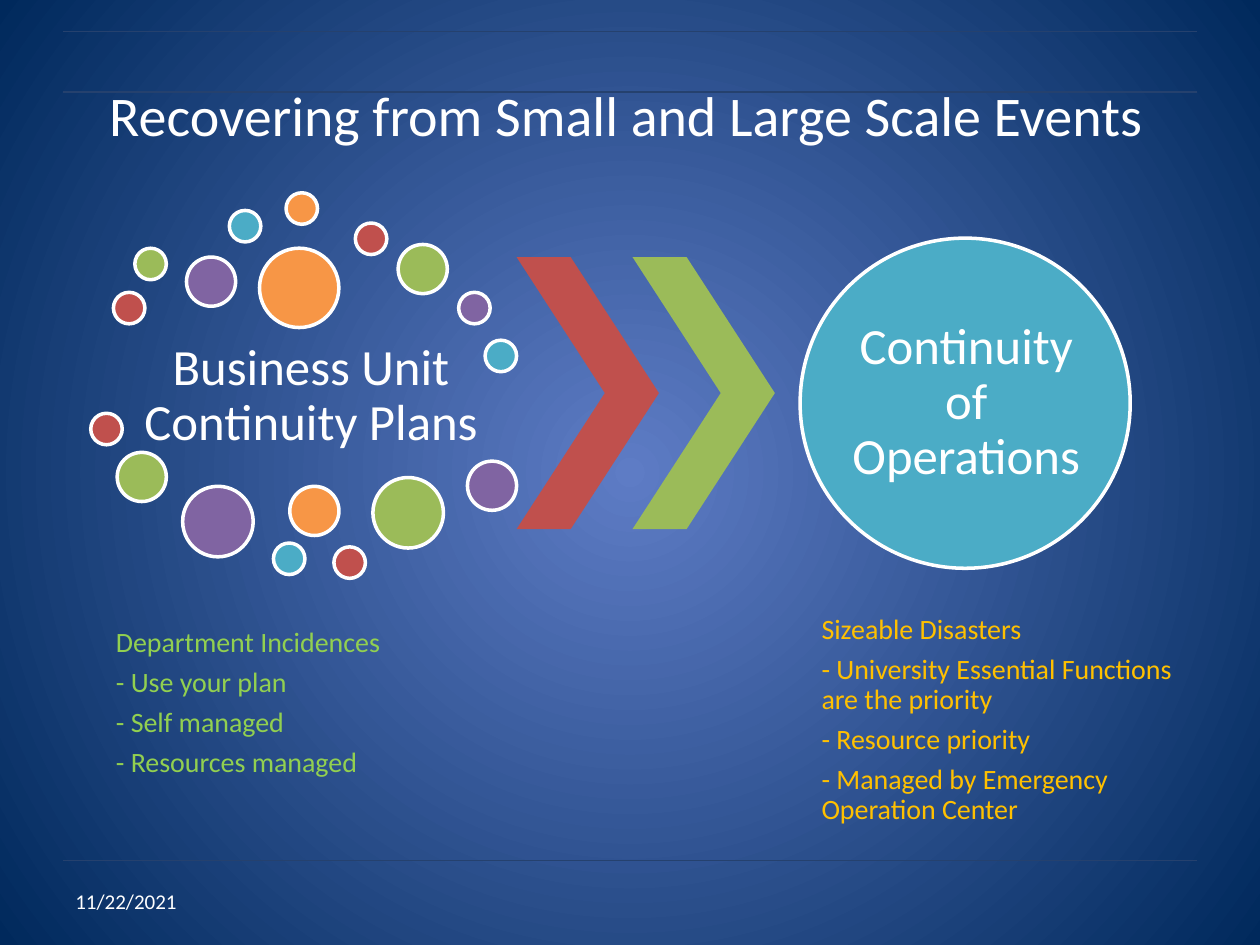
from itertools import cycle
from typing import NamedTuple

from pptx import Presentation
from pptx.dml.color import RGBColor
from pptx.enum.shapes import MSO_CONNECTOR, MSO_SHAPE
from pptx.enum.text import MSO_ANCHOR, PP_ALIGN
from pptx.oxml import parse_xml
from pptx.oxml.ns import nsdecls, qn
from pptx.shapes.autoshape import Shape
from pptx.slide import Slide
from pptx.util import Inches, Pt

WHITE, RULE = "FFFFFF", "25416E"
RED, GREEN, PURPLE, TEAL, ORANGE = "C0504D", "9BBB59", "8064A2", "4BACC6", "F79646"
ACCENTS = (RED, GREEN, PURPLE, TEAL, ORANGE)
SMALL, MEDIUM, LARGE, LARGEST = 0.25, 0.39, 0.56, 0.63


class Box(NamedTuple):
    left: float
    top: float
    width: float
    height: float


class Dot(NamedTuple):
    left: float
    top: float
    diameter: float


class Label(NamedTuple):
    box: Box
    lines: tuple[str, ...]
    size: float
    color: str = WHITE
    align: PP_ALIGN = PP_ALIGN.LEFT
    inset_x: float = 0.1
    inset_y: float = 0.05
    diagram: bool = True


DOTS = (
    Dot(0.9, 2.32, SMALL), Dot(1.07, 1.97, SMALL), Dot(1.48, 2.04, MEDIUM),
    Dot(1.82, 1.67, SMALL), Dot(2.27, 1.53, SMALL), Dot(2.82, 1.77, SMALL),
    Dot(3.16, 1.94, MEDIUM), Dot(3.64, 2.32, SMALL), Dot(3.85, 2.7, SMALL),
    Dot(2.06, 1.97, LARGEST), Dot(0.72, 3.28, SMALL), Dot(0.93, 3.59, MEDIUM),
    Dot(1.45, 3.86, LARGE), Dot(2.17, 4.31, SMALL), Dot(2.3, 3.86, MEDIUM),
    Dot(2.65, 4.34, SMALL), Dot(2.96, 3.79, LARGE), Dot(3.71, 3.66, MEDIUM),
)

LABELS = (
    Label(Box(0.93, 2.64, 3.08, 1.02), ("Business Unit Continuity Plans",), 29,
          align=PP_ALIGN.CENTER, inset_x=0.04, inset_y=0.04),
    Label(Box(0.9, 4.63, 3.08, 1.9),
          ("Department Incidences", "- Use your plan", "- Self managed",
           "- Resources managed"),
          16, "92D050", inset_x=0.02, inset_y=0.02),
    Label(Box(6.74, 2.27, 1.86, 1.86), ("Continuity of Operations",), 29,
          align=PP_ALIGN.CENTER, inset_x=0, inset_y=0),
    Label(Box(6.5, 4.77, 3.02, 1.9),
          ("Sizeable Disasters",
           "- University Essential Functions are the priority",
           "- Resource priority", "- Managed by Emergency Operation Center"),
          16, "FFC000", inset_x=0.02, inset_y=0.02),
    Label(Box(0.06, 0.28, 9.82, 1.25),
          ("Recovering from Small and Large Scale Events",), 32,
          align=PP_ALIGN.CENTER, diagram=False),
    Label(Box(0.5, 6.95, 2.33, 0.4), ("11/22/2021",), 12, diagram=False),
)


def rgb(color: str) -> RGBColor:
    return RGBColor.from_string(color)


def apply_format(target: object, values: dict[str, object]) -> None:
    for name, value in values.items():
        setattr(target, name, value)


def paint_background(slide: Slide) -> None:
    """Fill the slide with a gradient that spreads from its centre."""
    fill = slide.background.fill
    fill.gradient()
    for stop, color, position in zip(fill.gradient_stops, ("5E7CC5", "00295C"), (0, 1)):
        stop.color.rgb = rgb(color)
        stop.position = position
    gradient = slide.element.find(".//" + qn("a:gradFill"))
    gradient.replace(gradient.find(qn("a:lin")), parse_xml(
        f'<a:path {nsdecls("a")} path="circle">'
        '<a:fillToRect l="50000" t="50000" r="50000" b="50000"/></a:path>'))


def add_rule(slide: Slide, y: float) -> None:
    rule = slide.shapes.add_connector(
        MSO_CONNECTOR.STRAIGHT, Inches(0.5), Inches(y), Inches(9.5), Inches(y))
    rule.line.color.rgb = rgb(RULE)
    rule.line.width = Pt(0.75)
    rule.element.spPr.append(parse_xml(f'<a:effectLst {nsdecls("a")}/>'))


def add_filled(slide: Slide, kind: MSO_SHAPE, box: Box, color: str) -> Shape:
    shape = slide.shapes.add_shape(kind, *map(Inches, box))
    shape.shadow.inherit = False
    shape.fill.solid()
    shape.fill.fore_color.rgb = rgb(color)
    shape.line.fill.background()
    return shape


def add_circle(slide: Slide, dot: Dot, color: str) -> None:
    box = Box(dot.left, dot.top, dot.diameter, dot.diameter)
    circle = add_filled(slide, MSO_SHAPE.OVAL, box, color)
    circle.line.color.rgb = rgb(WHITE)
    circle.line.width = Pt(2)


def add_label(slide: Slide, label: Label) -> None:
    frame = slide.shapes.add_textbox(*map(Inches, label.box)).text_frame
    apply_format(frame, {
        "word_wrap": True,
        "vertical_anchor": MSO_ANCHOR.MIDDLE,
        "margin_left": Inches(label.inset_x),
        "margin_right": Inches(label.inset_x),
        "margin_top": Inches(label.inset_y),
        "margin_bottom": Inches(label.inset_y),
    })
    spacing = {"line_spacing": 0.9, "space_after": Pt(0.35 * label.size)}
    for index, line in enumerate(label.lines):
        paragraph = frame.add_paragraph() if index else frame.paragraphs[0]
        apply_format(paragraph, {"alignment": label.align}
                     | (spacing if label.diagram else {}))
        run = paragraph.add_run()
        run.text = line
        apply_format(run.font, {"name": "Calibri", "size": Pt(label.size)})
        run.font.color.rgb = rgb(label.color)


def main() -> None:
    deck = Presentation()
    deck.slide_width, deck.slide_height = Inches(10), Inches(7.5)
    slide = deck.slides.add_slide(deck.slide_layouts[6])
    paint_background(slide)
    for y in (6.83, 0.25, 0.73):
        add_rule(slide, y)
    for dot, color in zip(DOTS, cycle(ACCENTS)):
        add_circle(slide, dot, color)
    for left, color in ((4.1, RED), (5.02, GREEN)):
        chevron = add_filled(slide, MSO_SHAPE.CHEVRON, Box(left, 2.04, 1.13, 2.16), color)
        chevron.adjustments[0] = 0.62
    add_circle(slide, Dot(6.35, 1.89, 2.62), TEAL)
    for label in LABELS:
        add_label(slide, label)
    deck.save("out.pptx")


if __name__ == "__main__":
    main()
